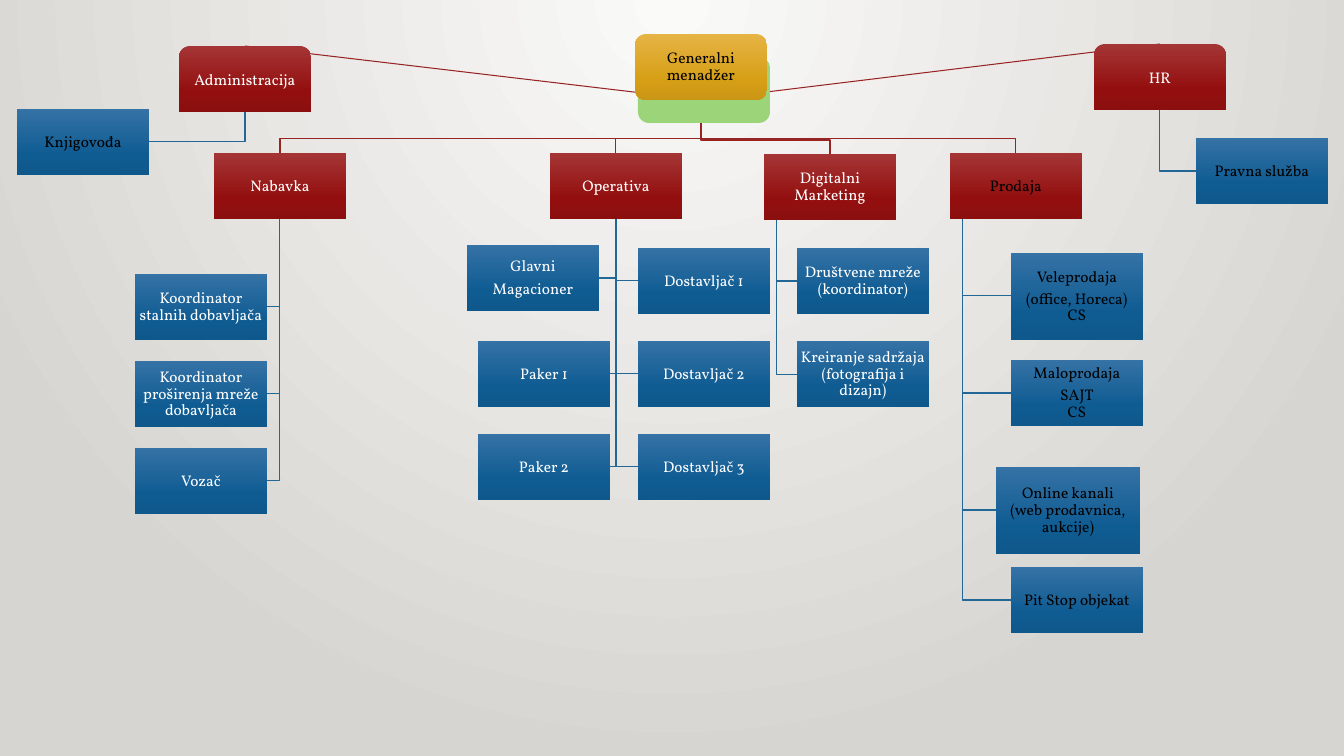
from pptx import Presentation
from pptx.dml.color import RGBColor
from pptx.enum.shapes import MSO_CONNECTOR, MSO_SHAPE
from pptx.enum.text import MSO_ANCHOR, PP_ALIGN
from pptx.oxml import parse_xml
from pptx.oxml.ns import nsdecls
from pptx.util import Emu, Pt
from lxml.etree import SubElement
from pptx.oxml.ns import qn

SCALE = 914400 / 100.8  # EMU in one px
WIDE, HIGH = 132, 66    # usual box
FONT = "Vollkorn"

BLACK = RGBColor(0x00, 0x00, 0x00)
WHITE = RGBColor(0xFF, 0xFF, 0xFF)
GREEN = RGBColor(0x9C, 0xD5, 0x79)
RULE_RED = RGBColor(0x97, 0x23, 0x23)
RULE_BLUE = RGBColor(0x23, 0x67, 0x97)

# Gradient stops: percent and colour
PAPER = [(0, RGBColor(0xFA, 0xFA, 0xF9)), (100, RGBColor(0xD7, 0xD5, 0xD2))]
GOLD = [(0, RGBColor(0xE6, 0xB4, 0x45)), (69, RGBColor(0xD7, 0x9F, 0x16)),
        (100, RGBColor(0xCA, 0x96, 0x16))]
RED = [(0, RGBColor(0xA5, 0x35, 0x35)), (69, RGBColor(0x93, 0x0F, 0x0F)),
       (100, RGBColor(0x8B, 0x0F, 0x0F))]
BLUE = [(0, RGBColor(0x35, 0x72, 0xA5)), (69, RGBColor(0x0F, 0x5C, 0x93)),
        (100, RGBColor(0x0F, 0x58, 0x8B))]

DOWN = '<a:lin ang="5400000" scaled="0"/>'
ROUND = ('<a:path path="circle">'
         '<a:fillToRect l="43000" t="0" r="43000" b="100000"/></a:path>')


def px(num):
    return Emu(round(num * SCALE))


def paint(fill, node, stops, way):
    """Fill with a gradient of any number of stops."""
    fill.gradient()
    old = node.xpath(".//a:gradFill")[0]
    marks = "".join(f'<a:gs pos="{at * 1000}"><a:srgbClr val="{tint}"/></a:gs>'
                    for at, tint in stops)
    new = parse_xml(f'<a:gradFill {nsdecls("a")} rotWithShape="1">'
                    f'<a:gsLst>{marks}</a:gsLst>{way}</a:gradFill>')
    old.getparent().replace(old, new)


def send_back(slide, item):
    slide.shapes._spTree.insert(2, item._element)


def write(shape, text, ink):
    """Centred text: \\n parts paragraphs, \\v parts lines."""
    frame = shape.text_frame
    frame.word_wrap = True
    frame.vertical_anchor = MSO_ANCHOR.MIDDLE
    frame.margin_left = frame.margin_right = px(1)
    frame.margin_top = frame.margin_bottom = px(1)
    for num, part in enumerate(text.split("\n")):
        para = frame.add_paragraph() if num else frame.paragraphs[0]
        para.alignment = PP_ALIGN.CENTER
        para.line_spacing = 0.9
        para.space_after = Pt(4)
        for row, words in enumerate(part.split("\v")):
            if row:
                para.add_line_break()
            run = para.add_run()
            run.text = words
            run.font.name = FONT
            run.font.size = Pt(11)
            run.font.color.rgb = ink


def card(slide, x, y, text, skin, ink=WHITE, w=WIDE, h=HIGH,
         form=MSO_SHAPE.RECTANGLE):
    shape = slide.shapes.add_shape(form, px(x), px(y), px(w), px(h))
    shape.shadow.inherit = False
    shape.line.fill.background()
    paint(shape.fill, shape._element.spPr, skin, DOWN)
    write(shape, text, ink)
    return shape


def elbow(slide, points, tint):
    """Open bent line behind the cards."""
    pen = slide.shapes.build_freeform(*points[0], scale=SCALE)
    pen.add_line_segments(points[1:], close=False)
    shape = pen.convert_to_shape()
    shape.shadow.inherit = False
    shape.fill.background()
    shape.line.color.rgb = tint
    shape.line.width = Pt(0.75)
    send_back(slide, shape)


def chief(slide, x, y):
    """Top manager over a green plate."""
    plate = slide.shapes.add_shape(MSO_SHAPE.ROUNDED_RECTANGLE, px(x + 3),
                                   px(y + 23), px(WIDE), px(HIGH))
    plate.shadow.inherit = False
    plate.fill.solid()
    plate.fill.fore_color.rgb = GREEN
    plate.line.fill.background()
    return card(slide, x, y, "Generalni menadžer", GOLD, BLACK,
                form=MSO_SHAPE.ROUNDED_RECTANGLE)


def branch(slide, x, y, name, kids, stem=WIDE // 2, ink=WHITE, kid_ink=WHITE,
           form=MSO_SHAPE.RECTANGLE):
    """Red head with blue cards hung on a stem; kids are placed from the head."""
    card(slide, x, y, name, RED, ink, form=form)
    trunk = x + stem
    for dx, dy, text, *size in kids:
        w, h = size or (WIDE, HIGH)
        left, mid = x + dx, y + dy + h // 2
        side = left if left > trunk else left + w
        elbow(slide, [(trunk, y + HIGH), (trunk, mid), (side, mid)], RULE_BLUE)
        card(slide, left, y + dy, text, BLUE, kid_ink, w, h)


def staff(slide, boss, x, y, name, kids):
    """Side office, joined to the manager by a straight line."""
    branch(slide, x, y, name, kids, kid_ink=BLACK,
           form=MSO_SHAPE.ROUND_2_SAME_RECTANGLE)
    end = px(x + WIDE // 2), px(y)
    line = slide.shapes.add_connector(MSO_CONNECTOR.STRAIGHT, *end, *end)
    line.begin_connect(boss, 2)
    line.line.color.rgb = RULE_RED
    line.line.width = Pt(0.75)
    SubElement(line._element.spPr, qn("a:effectLst"))
    send_back(slide, line)


def sector(slide, boss_at, x, y, name, kids, **look):
    """Main department, joined to the manager by a bent line."""
    branch(slide, x, y, name, kids, **look)
    top, mid = boss_at[0] + WIDE // 2, x + WIDE // 2
    elbow(slide, [(top, boss_at[1] + HIGH), (top, y - 14), (mid, y - 14),
                  (mid, y)], RULE_RED)


def stack(dx, dy, step, names):
    return [(dx, dy + step * num, name) for num, name in enumerate(names)]


def main():
    deck = Presentation()
    deck.slide_width, deck.slide_height = px(1344), px(756)
    slide = deck.slides.add_slide(deck.slide_layouts[6])
    paint(slide.background.fill, slide._element, PAPER, ROUND)

    # Manager and side offices
    top = (635, 34)
    boss = chief(slide, *top)
    staff(slide, boss, 179, 46, "Administracija", [(-162, 63, "Knjigovođa")])
    staff(slide, boss, 1094, 44, "HR", [(102, 94, "Pravna služba")])

    # Departments
    sector(slide, top, 214, 153, "Nabavka", stack(-79, 121, 87, [
        "Koordinator stalnih dobavljača",
        "Koordinator proširenja mreže dobavljača", "Vozač"]))
    sector(slide, top, 550, 153, "Operativa",
           [(-83, 92, "Glavni\nMagacioner")]
           + stack(-72, 188, 93, ["Paker 1", "Paker 2"])
           + stack(88, 95, 93, [f"Dostavljač {num}" for num in (1, 2, 3)]))
    sector(slide, top, 764, 154, "Digitalni Marketing", stack(33, 94, 93, [
        "Društvene mreže\v(koordinator)",
        "Kreiranje sadržaja\v(fotografija i dizajn)"]), stem=13)
    sector(slide, top, 950, 153, "Prodaja", [
        (61, 100, "Veleprodaja\n(office, Horeca)\vCS", WIDE, 87),
        (61, 207, "Maloprodaja\nSAJT\vCS"),
        (46, 314, "Online kanali\v(web prodavnica, aukcije)", 144, 87),
        (61, 414, "Pit Stop objekat")], stem=13, ink=BLACK, kid_ink=BLACK)

    deck.save("out.pptx")


if __name__ == "__main__":
    main()
